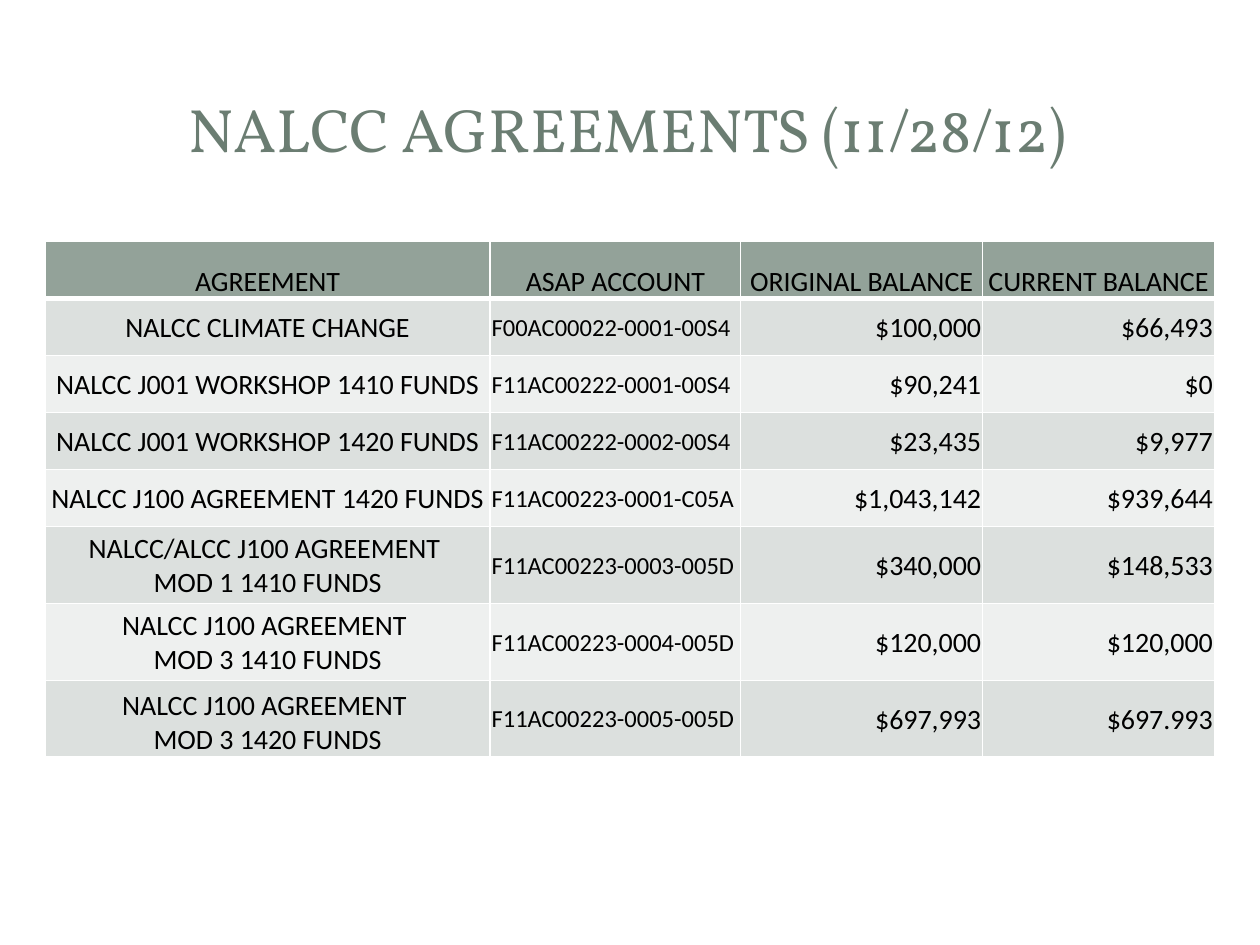
from lxml import etree
from pptx import Presentation
from pptx import util as u
from pptx.dml.color import RGBColor
from pptx.enum import shapes, text
from pptx.oxml.ns import qn

WHITE = RGBColor(0xFF, 0xFF, 0xFF)
BLACK = RGBColor(0, 0, 0)
TITLE_GREEN = RGBColor(0x6B, 0x7D, 0x72)
HEADER_GREEN = RGBColor(0x93, 0xA2, 0x99)
BANDS = (RGBColor(0xDC, 0xE0, 0xDE), RGBColor(0xEE, 0xF0, 0xEF))

RECTANGLE = shapes.MSO_SHAPE.RECTANGLE
ROUNDED = shapes.MSO_SHAPE.ROUNDED_RECTANGLE
LEFT, CENTER, RIGHT = (text.PP_ALIGN.LEFT, text.PP_ALIGN.CENTER,
                       text.PP_ALIGN.RIGHT)
MIDDLE, BOTTOM = text.MSO_ANCHOR.MIDDLE, text.MSO_ANCHOR.BOTTOM

COLUMN_WIDTHS = (8.97, 5.05, 4.88, 4.67)
COLUMN_FORMATS = (
    dict(align=CENTER), dict(align=LEFT, size=14),
    dict(align=RIGHT), dict(align=RIGHT),
)
HEADINGS = ("AGREEMENT", "ASAP ACCOUNT", "ORIGINAL BALANCE", "CURRENT BALANCE")
AGREEMENTS = (
    ("NALCC CLIMATE CHANGE", "F00AC00022-0001-00S4", "$100,000", "$66,493"),
    ("NALCC J001 WORKSHOP 1410 FUNDS", "F11AC00222-0001-00S4", "$90,241", "$0"),
    ("NALCC J001 WORKSHOP 1420 FUNDS", "F11AC00222-0002-00S4", "$23,435", "$9,977"),
    ("NALCC J100 AGREEMENT 1420 FUNDS", "F11AC00223-0001-C05A", "$1,043,142", "$939,644"),
    ("NALCC/ALCC J100 AGREEMENT \nMOD 1 1410 FUNDS", "F11AC00223-0003-005D", "$340,000", "$148,533"),
    ("NALCC J100 AGREEMENT \nMOD 3 1410 FUNDS", "F11AC00223-0004-005D", "$120,000", "$120,000"),
    ("NALCC J100 AGREEMENT \nMOD 3 1420 FUNDS", "F11AC00223-0005-005D", "$697,993", "$697.993"),
)


def write(frame, wording, size=16, font="Calibri", color=BLACK, align=LEFT):
    """Fill a text frame, one paragraph for each line of wording."""
    frame.text = wording
    for paragraph in frame.paragraphs:
        paragraph.alignment = align
        for run in paragraph.runs:
            run.font.size = u.Pt(size)
            run.font.name = font
            run.font.color.rgb = color


def add_panel(slide, kind, left, top, width, height):
    panel = slide.shapes.add_shape(
        kind, u.Cm(left), u.Cm(top), u.Cm(width), u.Cm(height))
    panel.shadow.inherit = False
    panel.fill.solid()
    panel.fill.fore_color.rgb = WHITE
    panel.line.fill.background()
    return panel


def add_backdrop(slide):
    """Place the rounded page and the two panels behind the title."""
    page = add_panel(slide, ROUNDED, 0.25, 0.28, 24.89, 18.52)
    page.adjustments[0] = 0.02
    title_frame = add_panel(slide, RECTANGLE, 0.76, 0.76, 23.88, 3.68)
    color = title_frame.fill._xPr.find(qn("a:solidFill"))[0]
    etree.SubElement(color, qn("a:alpha"), val="83000")
    add_panel(slide, RECTANGLE, 1.04, 1.04, 23.29, 3.1)


def add_borders(cell, top=1, bottom=1):
    """Draw white cell borders; widths are in points."""
    properties = cell._tc.get_or_add_tcPr()
    for side, width in (("L", 1), ("R", 1), ("T", top), ("B", bottom)):
        line = etree.SubElement(properties, qn(f"a:ln{side}"), w=str(u.Pt(width)))
        fill = etree.SubElement(line, qn("a:solidFill"))
        etree.SubElement(fill, qn("a:srgbClr"), val=str(WHITE))


def add_title(slide, left, top, width, height):
    title = slide.shapes.add_textbox(u.Cm(left), u.Cm(top), u.Cm(width), u.Cm(height))
    frame = title.text_frame
    frame.word_wrap = True
    frame.vertical_anchor = MIDDLE
    write(frame, "NALCC AGREEMENTS (11/28/12)", size=35, font="Vollkorn",
          color=TITLE_GREEN, align=CENTER)


def fill_cell(cell, wording, background, anchor=MIDDLE, top=1, bottom=1, **style):
    cell.margin_left = cell.margin_right = cell.margin_top = u.Cm(0.03)
    cell.margin_bottom = 0
    cell.vertical_anchor = anchor
    add_borders(cell, top, bottom)
    cell.fill.solid()
    cell.fill.fore_color.rgb = background
    write(cell.text_frame, wording, **style)


def add_agreements_table(slide, left, top, single_row=1.15, double_row=1.55):
    heights = [single_row] + [
        double_row if "\n" in agreement else single_row
        for agreement, *_ in AGREEMENTS]
    table = slide.shapes.add_table(
        len(heights), len(COLUMN_WIDTHS), u.Cm(left), u.Cm(top),
        u.Cm(sum(COLUMN_WIDTHS)), u.Cm(sum(heights))).table
    for column, width in zip(table.columns, COLUMN_WIDTHS):
        column.width = u.Cm(width)
    for row, height in zip(table.rows, heights):
        row.height = u.Cm(height)

    for column, heading in enumerate(HEADINGS):
        fill_cell(table.cell(0, column), heading, HEADER_GREEN,
                  anchor=BOTTOM, bottom=3, align=CENTER)
    for row, agreement in enumerate(AGREEMENTS, start=1):
        for column, wording in enumerate(agreement):
            last_name = row == len(AGREEMENTS) and column == 0
            fill_cell(table.cell(row, column), wording, BANDS[(row - 1) % 2],
                      anchor=BOTTOM if last_name else MIDDLE,
                      top=3 if row == 1 else 1, **COLUMN_FORMATS[column])


def main():
    deck = Presentation()
    deck.slide_width, deck.slide_height = u.Cm(25.4), u.Cm(19.05)
    slide = deck.slides.add_slide(deck.slide_layouts[6])
    add_backdrop(slide)
    add_title(slide, 1.19, 1.14, 22.94, 2.9)
    add_agreements_table(slide, 0.91, 4.87)
    deck.save("out.pptx")


if __name__ == "__main__":
    main()
